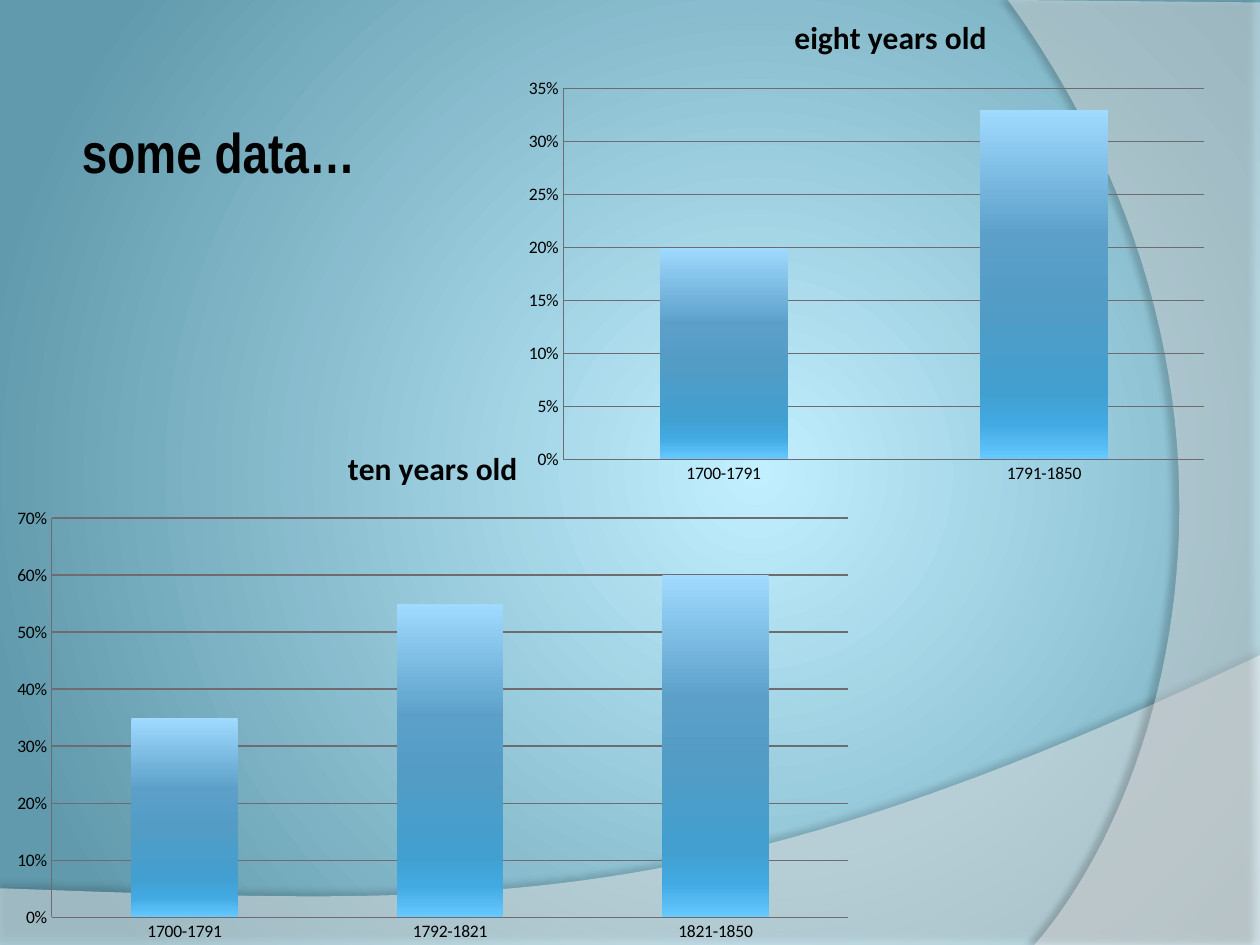
from pptx import Presentation
from pptx.chart.data import CategoryChartData
from pptx.dml.color import RGBColor
from pptx.enum.chart import XL_CHART_TYPE, XL_TICK_MARK
from pptx.enum.text import MSO_ANCHOR, PP_ALIGN
from pptx.oxml import parse_xml
from pptx.oxml.ns import nsdecls, qn
from pptx.util import Inches, Pt

BLACK = RGBColor(0x00, 0x00, 0x00)
WHITE = RGBColor(0xFF, 0xFF, 0xFF)
GRID_GRAY = RGBColor(0x70, 0x6B, 0x70)
SKY = RGBColor(0xC1, 0xEF, 0xFF)
TEAL = RGBColor(0x61, 0x9A, 0xAC)
BAR_STOPS = [
    (0, RGBColor(0xA0, 0xDA, 0xFF)),
    (36, RGBColor(0x5C, 0xA0, 0xC9)),
    (55, RGBColor(0x52, 0x9C, 0xC6)),
    (80, RGBColor(0x42, 0x9F, 0xCF)),
    (90, RGBColor(0x42, 0xA9, 0xE2)),
    (100, RGBColor(0x66, 0xCA, 0xFF)),
]
BACKGROUND_STOPS = [(0, SKY), (100, TEAL)]
RADIAL = '<a:path path="circle"><a:fillToRect l="60000" t="50000" r="40000" b="50000"/></a:path>'
DOWNWARD = '<a:lin ang="5400000" scaled="0"/>'

WIDTH, HEIGHT = 10, 7.5
TITLE = ("some data…", (0.55, 0.88, 3.71, 0.64))
WAVES = [
    {
        "corners": [(0, 7.05), (0, HEIGHT), (WIDTH, HEIGHT), (WIDTH, 5.2)],
        "curve": [(WIDTH, 5.2), (5.59, 7.29), (3.91, 7.19), (0, 7.05)],
        "opacity": 45, "shadow": (35, 3.5, 270),
    },
    {
        "corners": [(8, 0), (WIDTH, 0.02), (WIDTH, HEIGHT), (8.21, HEIGHT)],
        "curve": [(8.21, HEIGHT), (9.35, 6.19), (10.18, 3), (8, 0)],
        "opacity": 40, "shadow": (45, 4, 180),
    },
]
CHARTS = [
    {
        "title": "eight years old", "box": (4.08, 0, 5.59, 3.92),
        "values": {"1700-1791": 0.2, "1791-1850": 0.33}, "top": 0.35, "step": 0.05,
        "title_layout": {"x": 0.39, "y": 0.02},
        "plot_layout": {"x": 0.07, "y": 0.18, "w": 0.91, "h": 0.75},
    },
    {
        "title": "ten years old", "box": (0, 3.36, 6.87, 4.2),
        "values": {"1700-1791": 0.35, "1792-1821": 0.55, "1821-1850": 0.6},
        "top": 0.7, "step": 0.1,
    },
]


def set_gradient(fill, element, stops, direction):
    fill.gradient()
    old = next(element.iter(qn("a:gradFill")))
    marks = "".join(
        f'<a:gs pos="{position * 1000}"><a:srgbClr val="{color}"/></a:gs>'
        for position, color in stops
    )
    new = parse_xml(
        f'<a:gradFill {nsdecls("a")} rotWithShape="1">'
        f"<a:gsLst>{marks}</a:gsLst>{direction}</a:gradFill>"
    )
    old.getparent().replace(old, new)


def set_layout(element, shares, after=None, target=""):
    for old in element.findall(qn("c:layout")):
        element.remove(old)
    modes = '<c:xMode val="edge"/><c:yMode val="edge"/>'
    values = "".join(f'<c:{key} val="{share}"/>' for key, share in shares.items())
    layout = parse_xml(
        f'<c:layout {nsdecls("c")}><c:manualLayout>{target}{modes}{values}'
        "</c:manualLayout></c:layout>"
    )
    if after is None:
        element.insert(0, layout)
    else:
        element.find(qn(after)).addnext(layout)


def curve_points(controls, steps=48):
    for step in range(1, steps + 1):
        t = step / steps
        weights = ((1 - t) ** 3, 3 * t * (1 - t) ** 2, 3 * t**2 * (1 - t), t**3)
        yield tuple(
            sum(weight * point[axis] for weight, point in zip(weights, controls))
            for axis in (0, 1)
        )


def add_wave(slide, wave):
    outline = [*wave["corners"], *curve_points(wave["curve"])]
    start, *points = [(Inches(x), Inches(y)) for x, y in outline]
    builder = slide.shapes.build_freeform(*start)
    builder.add_line_segments(points, close=True)
    shape = builder.convert_to_shape()
    shape.line.fill.background()
    shape.fill.solid()
    shape.fill.fore_color.rgb = WHITE
    color = next(shape.element.spPr.iter(qn("a:srgbClr")))
    color.append(parse_xml(f'<a:alpha {nsdecls("a")} val="{wave["opacity"] * 1000}"/>'))
    opacity, distance, angle = wave["shadow"]
    shape.shadow.inherit = False
    effects = next(shape.element.iter(qn("a:effectLst")))
    effects.append(parse_xml(
        f'<a:outerShdw {nsdecls("a")} blurRad="{Pt(4)}" dist="{Pt(distance)}" '
        f'dir="{angle * 60000}" algn="ctr" rotWithShape="0">'
        f'<a:srgbClr val="{BLACK}"><a:alpha val="{opacity * 1000}"/></a:srgbClr>'
        "</a:outerShdw>"
    ))


def style_font(font, name, size, bold):
    font.name, font.size, font.bold = name, Pt(size), bold
    font.color.rgb = BLACK


def add_bar_chart(slide, content):
    data = CategoryChartData(number_format="0%")
    data.categories = list(content["values"])
    data.add_series("Series 1", list(content["values"].values()))
    chart = slide.shapes.add_chart(
        XL_CHART_TYPE.COLUMN_CLUSTERED, *map(Inches, content["box"]), data
    ).chart
    chart.has_legend = False
    style_font(chart.font, "Calibri", 10, False)
    chart.has_title = True
    run = chart.chart_title.text_frame.paragraphs[0].add_run()
    run.text = content["title"]
    style_font(run.font, "Calibri", 18, True)
    chart.chart_title.include_in_layout = False

    for axis in (chart.category_axis, chart.value_axis):
        axis.major_tick_mark = axis.minor_tick_mark = XL_TICK_MARK.NONE
        axis.format.line.color.rgb = GRID_GRAY
        axis.format.line.width = Pt(0.75)
    value_axis = chart.value_axis
    value_axis.minimum_scale, value_axis.maximum_scale = 0, content["top"]
    value_axis.major_unit = content["step"]
    value_axis.tick_labels.number_format = "0%"
    value_axis.tick_labels.number_format_is_linked = False
    value_axis.major_gridlines.format.line.color.rgb = GRID_GRAY
    value_axis.major_gridlines.format.line.width = Pt(0.75)

    plot = chart.plots[0]
    plot.gap_width = 150
    plot.vary_by_categories = False
    series = plot.series[0]
    set_gradient(series.format.fill, series._element, BAR_STOPS, DOWNWARD)

    if "plot_layout" in content:
        title = next(chart.element.iter(qn("c:title")))
        set_layout(title, content["title_layout"], after="c:tx")
        plot_area = next(chart.element.iter(qn("c:plotArea")))
        set_layout(plot_area, content["plot_layout"],
                   target='<c:layoutTarget val="inner"/>')


def place_title(slide, text, box):
    title = slide.shapes.title
    title.left, title.top, title.width, title.height = map(Inches, box)
    frame = title.text_frame
    frame.word_wrap = True
    frame.vertical_anchor = MSO_ANCHOR.MIDDLE
    paragraph = frame.paragraphs[0]
    paragraph.alignment = PP_ALIGN.LEFT
    run = paragraph.add_run()
    run.text = text
    style_font(run.font, "Arial Narrow", 32, True)


def main():
    presentation = Presentation()
    presentation.slide_width, presentation.slide_height = Inches(WIDTH), Inches(HEIGHT)
    slide = presentation.slides.add_slide(presentation.slide_layouts[5])
    set_gradient(slide.background.fill, slide.element, BACKGROUND_STOPS, RADIAL)
    place_title(slide, *TITLE)
    for wave in WAVES:
        add_wave(slide, wave)
    for content in CHARTS:
        add_bar_chart(slide, content)
    presentation.save("out.pptx")


if __name__ == "__main__":
    main()
